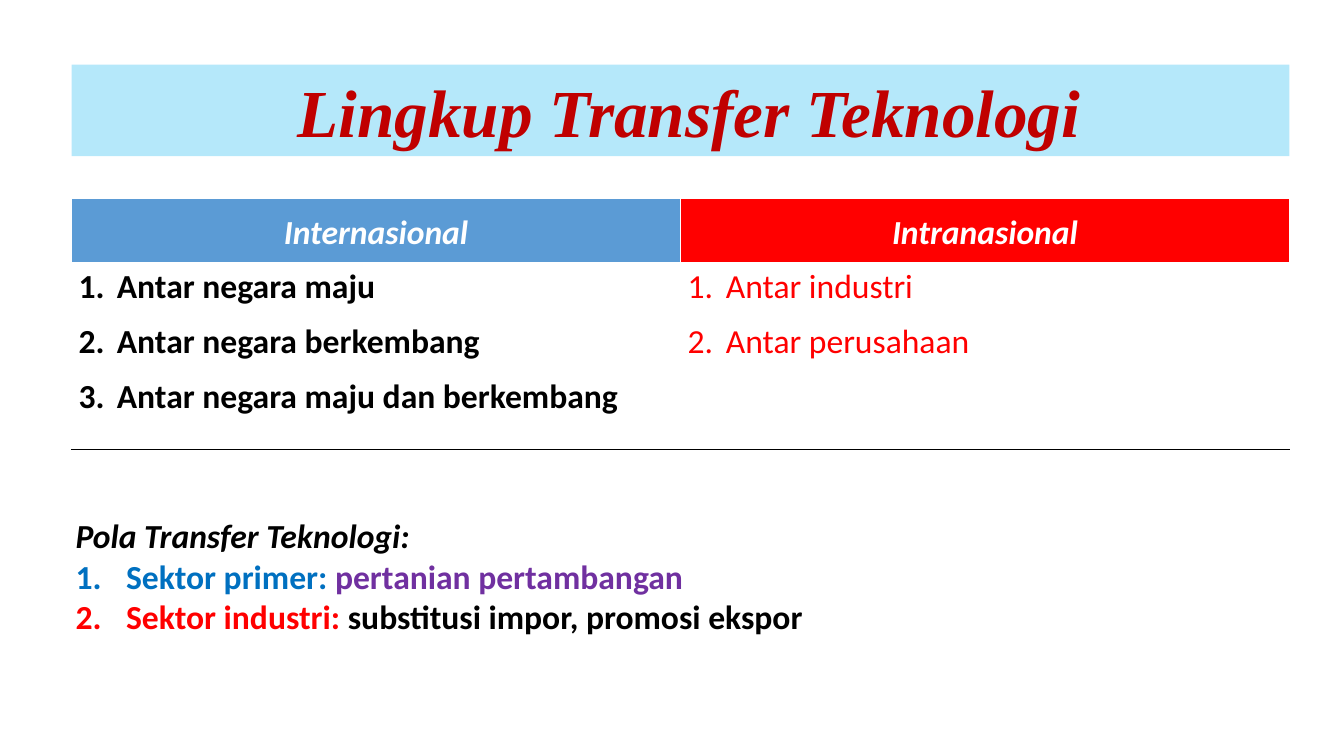
from dataclasses import dataclass

from lxml import etree
from pptx import Presentation
from pptx import util as u
from pptx.dml import color
from pptx.enum import text
from pptx.oxml import ns


@dataclass(frozen=True)
class Theme:
    heading_font: str = "Times New Roman"
    body_font: str = "Calibri"
    heading_size: int = 48
    body_size: int = 24
    banner: str = "00B0F0"
    heading: str = "C00000"
    header_blue: str = "5B9BD5"
    red: str = "FF0000"
    blue: str = "0070C0"
    purple: str = "7030A0"
    black: str = "000000"
    white: str = "FFFFFF"


THEME = Theme()


def rgb(value):
    return color.RGBColor.from_string(value)


def place(shape, box):
    shape.left, shape.top, shape.width, shape.height = map(u.Inches, box)


def add_run(paragraph, words, ink, bold=True, italic=False,
            font=THEME.body_font, size=THEME.body_size):
    run = paragraph.add_run()
    run.text = words
    run.font.name = font
    run.font.size = u.Pt(size)
    run.font.bold = bold
    run.font.italic = italic
    run.font.color.rgb = rgb(ink)


def paragraph_at(frame, index):
    return frame.paragraphs[0] if index == 0 else frame.add_paragraph()


def set_list_style(paragraph, indent=0):
    properties = paragraph._p.get_or_add_pPr()
    properties.set("marL", str(u.Inches(indent)))
    properties.set("indent", str(u.Inches(-indent)))
    if indent:
        number = etree.SubElement(properties, ns.qn("a:buAutoNum"))
        number.set("type", "arabicPeriod")
    else:
        etree.SubElement(properties, ns.qn("a:buNone"))


def set_borders(cell, bottom_ink, bottom_width):
    properties = cell._tc.get_or_add_tcPr()
    sides = [("a:lnL", THEME.white, 1), ("a:lnR", THEME.white, 1),
             ("a:lnT", THEME.white, 1), ("a:lnB", bottom_ink, bottom_width)]
    for position, (side, ink, width) in enumerate(sides):
        line = etree.Element(ns.qn(side), w=str(u.Pt(width)))
        fill = etree.SubElement(line, ns.qn("a:solidFill"))
        etree.SubElement(fill, ns.qn("a:srgbClr"), val=ink)
        properties.insert(position, line)


def add_heading(slide, box, words):
    shape = slide.shapes.title
    place(shape, box)
    shape.fill.solid()
    shape.fill.fore_color.rgb = rgb(THEME.banner)
    banner_color = shape._element.spPr.find(".//" + ns.qn("a:srgbClr"))
    etree.SubElement(banner_color, ns.qn("a:alpha"), val="29000")
    frame = shape.text_frame
    frame.auto_size = text.MSO_AUTO_SIZE.NONE
    frame.vertical_anchor = text.MSO_ANCHOR.MIDDLE
    frame.margin_left = u.Inches(0.27)
    paragraph = frame.paragraphs[0]
    paragraph.alignment = text.PP_ALIGN.CENTER
    add_run(paragraph, words, THEME.heading, italic=True,
            font=THEME.heading_font, size=THEME.heading_size)


def format_cell(cell, anchor):
    cell.margin_left = cell.margin_right = u.Inches(0.07)
    cell.margin_top = cell.margin_bottom = 0
    cell.vertical_anchor = anchor


def add_scope_table(slide, box, columns):
    table = slide.shapes.add_table(2, len(columns), *map(u.Inches, box)).table
    table.horz_banding = False
    header_height = 0.65
    table.rows[0].height = u.Inches(header_height)
    table.rows[1].height = u.Inches(box[3] - header_height)
    for index, (heading, fill, items, ink, bold) in enumerate(columns):
        table.columns[index].width = u.Inches(box[2] / len(columns))

        header = table.cell(0, index)
        format_cell(header, text.MSO_ANCHOR.MIDDLE)
        header.fill.solid()
        header.fill.fore_color.rgb = rgb(fill)
        set_borders(header, THEME.white, 3)
        paragraph = header.text_frame.paragraphs[0]
        paragraph.alignment = text.PP_ALIGN.CENTER
        paragraph.line_spacing = 1.07
        add_run(paragraph, heading, THEME.white, italic=True)

        body = table.cell(1, index)
        format_cell(body, text.MSO_ANCHOR.TOP)
        body.fill.background()
        set_borders(body, THEME.black, 1)
        for row, item in enumerate(items):
            paragraph = paragraph_at(body.text_frame, row)
            set_list_style(paragraph, 0.38)
            paragraph.line_spacing = 1.07
            paragraph.space_after = u.Pt(8)
            add_run(paragraph, item, ink, bold)


def add_patterns(slide, box, heading, patterns):
    shape = slide.placeholders[1]
    place(shape, box)
    frame = shape.text_frame
    frame.auto_size = text.MSO_AUTO_SIZE.NONE
    frame.vertical_anchor = text.MSO_ANCHOR.TOP
    for index, runs in enumerate([[(heading, THEME.black)]] + patterns):
        paragraph = paragraph_at(frame, index)
        set_list_style(paragraph, 0.5 if index else 0)
        paragraph.alignment = text.PP_ALIGN.JUSTIFY
        paragraph.space_before = u.Pt(0)
        for words, ink in runs:
            add_run(paragraph, words, ink, italic=index == 0)


def main():
    presentation = Presentation()
    presentation.slide_width = u.Inches(13.33)
    presentation.slide_height = u.Inches(7.5)
    slide = presentation.slides.add_slide(presentation.slide_layouts[1])
    left, width = 0.71, 12.08
    add_heading(slide, (left, 0.64, width, 0.91), "Lingkup Transfer Teknologi")
    add_scope_table(slide, (left, 1.97, width, 2.49), [
        ("Internasional", THEME.header_blue,
         ["Antar negara maju", "Antar negara berkembang",
          "Antar negara maju dan berkembang"], THEME.black, True),
        ("Intranasional", THEME.red,
         ["Antar industri", "Antar perusahaan"], THEME.red, False),
    ])
    add_patterns(slide, (0.65, 5.06, 12.2, 1.31), "Pola Transfer Teknologi:", [
        [("Sektor primer: ", THEME.blue),
         ("pertanian pertambangan", THEME.purple)],
        [("Sektor industri: ", THEME.red),
         ("substitusi impor, promosi ekspor", THEME.black)],
    ])
    presentation.save("out.pptx")


if __name__ == "__main__":
    main()
